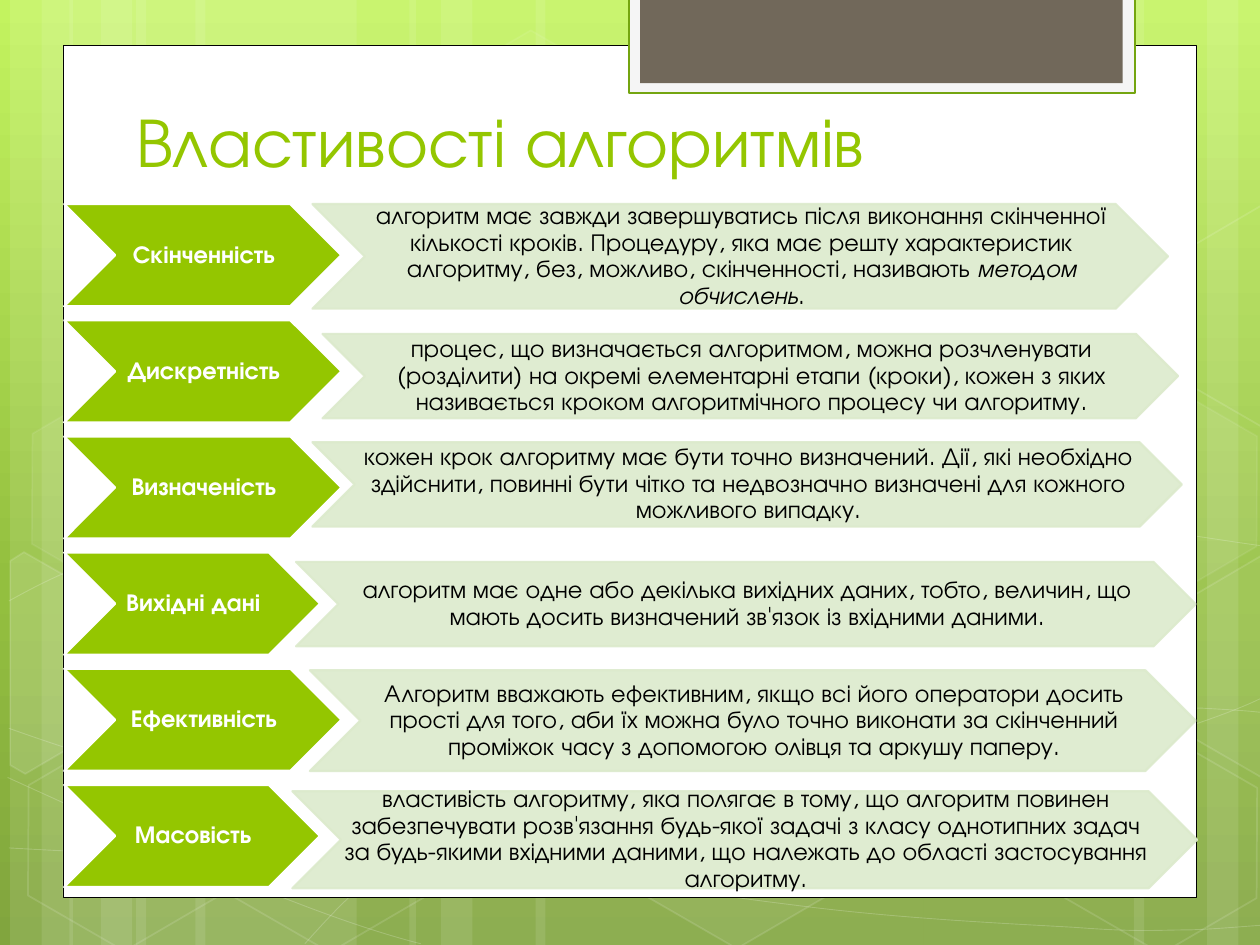
from dataclasses import dataclass
from math import cos, radians, sin
from typing import NamedTuple

from lxml.etree import SubElement
from pptx import Presentation
from pptx.dml.color import RGBColor
from pptx.enum.shapes import MSO_SHAPE
from pptx.enum.text import MSO_ANCHOR, PP_ALIGN
from pptx.oxml.ns import qn
from pptx.util import Inches, Pt

FACE = "TeX Gyre Adventor"
GREEN, PALE, WHITE, BLACK = "94C600", "DCEACC", "FFFFFF", "000000"
TILT = 30  # degrees, for every hexagon


class Ink(NamedTuple):
    hue: str
    alpha: int = 100
    width: float = 0


class Hexa(NamedTuple):
    left: float
    top: float
    fill: int
    edge: int


class Part(NamedTuple):
    fill: int
    mid: tuple
    dots: list


@dataclass
class Row:
    name: str
    width: float
    box: tuple  # left, top, width, height of the description
    runs: tuple  # every second run is italic


NONE = Ink(WHITE, 0)

STRIPES = [(1.08, 1.75), (0.08, 0.5), (0.33, 0.83), (1.55, 1.75), (0.55, 0.5), (0.8, 0.83),
           (7.33, 1.75), (9.58, 0.5), (9, 0.83), (4.25, 3.08), (3.25, 0.5), (3.5, 0.83)]

# Bezier curves: start point, then two handles and an end for each piece
CURVES = [
    [(0.07, 6.73), (0.61, 6.76), (1.15, 6.79), (1.9, 6.78), (2.65, 6.77), (3.58, 6.75), (4.58, 6.65),
     (5.58, 6.55), (7, 6.36), (7.92, 6.17), (8.83, 5.98), (9.77, 5.68), (10.07, 5.51)],
    [(0.07, 4.77), (0.36, 4.61), (0.65, 4.46), (1.21, 4.31), (1.78, 4.16), (2.59, 3.94), (3.47, 3.87),
     (4.36, 3.8), (5.44, 3.79), (6.54, 3.87), (7.64, 3.95), (9.47, 4.26), (10.07, 4.34)],
    [(0.06, 6.17), (1.27, 6.72), (2.47, 7.27), (3.34, 7.49)],
    [(0.07, 5.78), (0.38, 5.89), (0.7, 6), (1.28, 6.16), (1.86, 6.31), (2.73, 6.56), (3.57, 6.73),
     (4.4, 6.9), (5.45, 7.08), (6.28, 7.18), (7.11, 7.29), (8, 7.33), (8.53, 7.36),
     (9.05, 7.4), (9.19, 7.38), (9.45, 7.38), (9.71, 7.37), (9.89, 7.35), (10.07, 7.34)],
    [(2.42, 7.49), (2.6, 7.29), (2.78, 7.09), (3.02, 6.91), (3.26, 6.73), (3.6, 6.53), (3.88, 6.39),
     (4.16, 6.25), (4.33, 6.19), (4.7, 6.09), (5.06, 5.99), (5.73, 5.85), (6.08, 5.78),
     (6.44, 5.71), (6.49, 5.71), (6.8, 5.69), (7.11, 5.66), (7.6, 5.63), (7.94, 5.62),
     (8.29, 5.61), (8.86, 5.62), (8.86, 5.62), (8.86, 5.62), (9.53, 5.62), (9.53, 5.62),
     (9.71, 5.63), (9.88, 5.64), (9.97, 5.65), (10.06, 5.66), (10.03, 5.65), (10.06, 5.66)],
]

HEXAS = [Hexa(3.34, 0.36, 4, 8), Hexa(4.97, 5.89, 6, 12), Hexa(0.11, 5.91, 0, 12),
         Hexa(0.14, 3.12, 7, 8), Hexa(1.74, 5.92, 0, 12), Hexa(7.53, 4.53, 10, 12),
         Hexa(8.34, 5.93, 0, 12), Hexa(8.34, 3.14, 7, 8)]

# Hexagons cut by the slide edge
PARTS = [
    Part(10, (0.36, 5.35),
         [(0.08, 4.45), (0.19, 4.38), (0.96, 4.82), (0.95, 5.7), (0.2, 6.14), (0.08, 6.07)]),
    Part(4, (9.85, 5.2),
         [(9.26, 4.85), (10.01, 4.41), (10.09, 4.46), (10.09, 6.13), (10.02, 6.17), (9.26, 5.73)]),
    Part(0, (9.85, 2.41),
         [(9.26, 2.07), (10.01, 1.63), (10.1, 1.68), (10.09, 3.35), (10.02, 3.39), (9.26, 2.95)]),
]

ROWS = [
    Row("Скінченність", 2.2, (2.48, 1.62, 6.79, 0.83),
        ("алгоритм має завжди завершуватись після виконання скінченної кількості кроків. "
         "Процедуру, яка має решту характеристик алгоритму, без, можливо, скінченності, "
         "називають ", "методом обчислень", ".")),
    Row("Дискретність", 2.2, (2.56, 2.65, 6.79, 0.67),
        ("процес, що визначається алгоритмом, можна розчленувати (розділити) на окремі "
         "елементарні етапи (кроки), кожен з яких називається кроком алгоритмічного "
         "процесу чи алгоритму.",)),
    Row("Визначеність", 2.2, (2.48, 3.51, 6.9, 0.67),
        ("кожен крок алгоритму має бути точно визначений. Дії, які необхідно здійснити, "
         "повинні бути чітко та недвозначно визначені для кожного можливого випадку.",)),
    Row("Вихідні дані", 2.03, (2.35, 4.46, 7.14, 0.67),
        ("алгоритм має одне або декілька вихідних даних, тобто, величин, що мають досить "
         "визначений зв'язок із вхідними даними.",)),
    Row("Ефективність", 2.2, (2.46, 5.32, 7.03, 0.8),
        ("Алгоритм вважають ефективним, якщо всі його оператори досить прості для того, "
         "аби їх можна було точно виконати за скінченний проміжок часу з допомогою олівця "
         "та аркушу паперу.",)),
    Row("Масовість", 2.03, (2.32, 6.28, 7.18, 0.77),
        ("властивість алгоритму, яка полягає в тому, що алгоритм повинен забезпечувати "
         "розв'язання будь-якої задачі з класу однотипних задач за будь-якими вхідними "
         "даними, що належать до області застосування алгоритму.",)),
]


def assign(item, values: dict) -> None:
    for key, value in values.items():
        setattr(item, key, value)


def color(hue: str) -> RGBColor:
    return RGBColor.from_string(hue)


def paint(fill, ink: Ink, find) -> None:
    """Fill in one colour; find() gives the element that holds the fill."""
    if not ink.alpha:
        fill.background()
        return
    fill.solid()
    fill.fore_color.rgb = color(ink.hue)
    if ink.alpha < 100:
        tone = find().find(qn("a:solidFill"))[0]
        SubElement(tone, qn("a:alpha"), val=str(ink.alpha * 1000))


def dress(shape, fill: Ink, edge: Ink) -> None:
    props = shape.element.spPr
    shape.shadow.inherit = False
    paint(shape.fill, fill, lambda: props)
    paint(shape.line.fill, edge, lambda: props.find(qn("a:ln")))
    if edge.alpha:
        shape.line.width = Pt(edge.width)


def block(slide, kind, box: tuple, fill: Ink, edge: Ink = NONE):
    shape = slide.shapes.add_shape(kind, *map(Inches, box))
    dress(shape, fill, edge)
    return shape


def trace(slide, dots: list, closed: bool, fill: Ink, edge: Ink):
    spots = [(Inches(x), Inches(y)) for x, y in dots]
    pen = slide.shapes.build_freeform(*spots[0])
    pen.add_line_segments(spots[1:], close=closed)
    shape = pen.convert_to_shape()
    dress(shape, fill, edge)
    return shape


def bend(shape) -> None:
    """Turn each three line segments into one Bezier piece."""
    lines = list(shape.element.iter(qn("a:lnTo")))
    track = lines[0].getparent()
    for i in range(0, len(lines), 3):
        piece = SubElement(track, qn("a:cubicBezTo"))
        for line in lines[i:i + 3]:
            piece.append(line[0])
            track.remove(line)


def level(dot: tuple, mid: tuple) -> tuple:
    """Undo the tilt of a point around the middle of its shape."""
    x, y = dot[0] - mid[0], dot[1] - mid[1]
    c, s = cos(radians(TILT)), sin(radians(TILT))
    return mid[0] + x * c + y * s, mid[1] - x * s + y * c


def arrow(slide, box: tuple, fill: Ink, edge: Ink, runs: tuple, hue: str, bold: bool) -> None:
    frame = block(slide, MSO_SHAPE.CHEVRON, box, fill, edge).text_frame
    assign(frame, dict(word_wrap=True, vertical_anchor=MSO_ANCHOR.MIDDLE, margin_left=Inches(0.02),
                       margin_right=0, margin_top=Inches(0.01), margin_bottom=Inches(0.01)))
    para = frame.paragraphs[0]
    assign(para, dict(alignment=PP_ALIGN.CENTER, line_spacing=0.9))
    for i, text in enumerate(runs):
        run = para.add_run()
        run.text = text
        assign(run.font, dict(name=FACE, size=Pt(14), bold=bold, italic=i % 2 == 1))
        run.font.color.rgb = color(hue)


def backdrop(slide) -> None:
    # Gradient with three stops, from top to bottom
    fill = slide.background.fill
    fill.gradient()
    fill.gradient_angle = 270
    stops = next(slide.element.iter(qn("a:gsLst")))
    for stop in list(stops):
        stops.remove(stop)
    for place, hue in ((0, "C3F35F"), (62, "93BF3F"), (100, "81A53E")):
        stop = SubElement(stops, qn("a:gs"), pos=str(place * 1000))
        SubElement(stop, qn("a:srgbClr"), val=hue)
    # Stripes, curves and hexagons
    for left, width in STRIPES:
        block(slide, MSO_SHAPE.RECTANGLE, (left, 0, width, 7.5), Ink(WHITE, 10))
    for knots in CURVES:
        bend(trace(slide, knots, False, NONE, Ink(WHITE, 20, 0.5)))
    for hexa in HEXAS:
        shape = block(slide, MSO_SHAPE.HEXAGON, (hexa.left, hexa.top, 1.75, 1.52),
                      Ink(WHITE, hexa.fill), Ink(WHITE, hexa.edge, 1))
        shape.adjustments[0] = 0.285
        shape.rotation = TILT
    for part in PARTS:
        dots = [level(dot, part.mid) for dot in part.dots]
        trace(slide, dots, True, Ink(WHITE, part.fill), Ink(WHITE, 12, 1)).rotation = TILT
    # Paper and tab
    for box, hue, edge in (((0.5, 0.36, 9, 6.76), WHITE, Ink(BLACK, 100, 0.5)),
                           ((4.99, -0.02, 4.02, 0.76), "F5F5F5", Ink("74A510", 100, 1.25)),
                           ((5.08, -0.02, 3.83, 0.68), "71685A", NONE)):
        block(slide, MSO_SHAPE.RECTANGLE, box, Ink(hue), edge)


def heading(slide) -> None:
    title = slide.shapes.title
    title.element.getparent().append(title.element)  # bring in front of the paper
    assign(title, dict(left=Inches(0.98), top=Inches(0.68), width=Inches(7.26), height=Inches(1.49)))
    frame = title.text_frame
    frame.text = "Властивості алгоритмів"
    assign(frame, dict(word_wrap=True, vertical_anchor=MSO_ANCHOR.BOTTOM, margin_bottom=Inches(0.73)))
    para = frame.paragraphs[0]
    para.alignment = PP_ALIGN.LEFT
    font = para.runs[0].font
    assign(font, dict(name=FACE, size=Pt(40)))
    font.color.rgb = color(GREEN)


def main() -> None:
    deck = Presentation()
    assign(deck, dict(slide_width=Inches(10), slide_height=Inches(7.5)))
    slide = deck.slides.add_slide(deck.slide_layouts[5])
    backdrop(slide)
    heading(slide)
    # Property names, evenly spread, and their descriptions
    first, last = 1.62, 6.23
    step = (last - first) / (len(ROWS) - 1)
    for i, row in enumerate(ROWS):
        arrow(slide, (0.51, first + step * i, row.width, 0.81), Ink(GREEN),
              Ink(WHITE, 100, 1.25), (row.name,), WHITE, True)
        arrow(slide, row.box, Ink(PALE, 90), Ink(PALE, 90, 1.25), row.runs, BLACK, False)
    deck.save("out.pptx")


if __name__ == "__main__":
    main()
